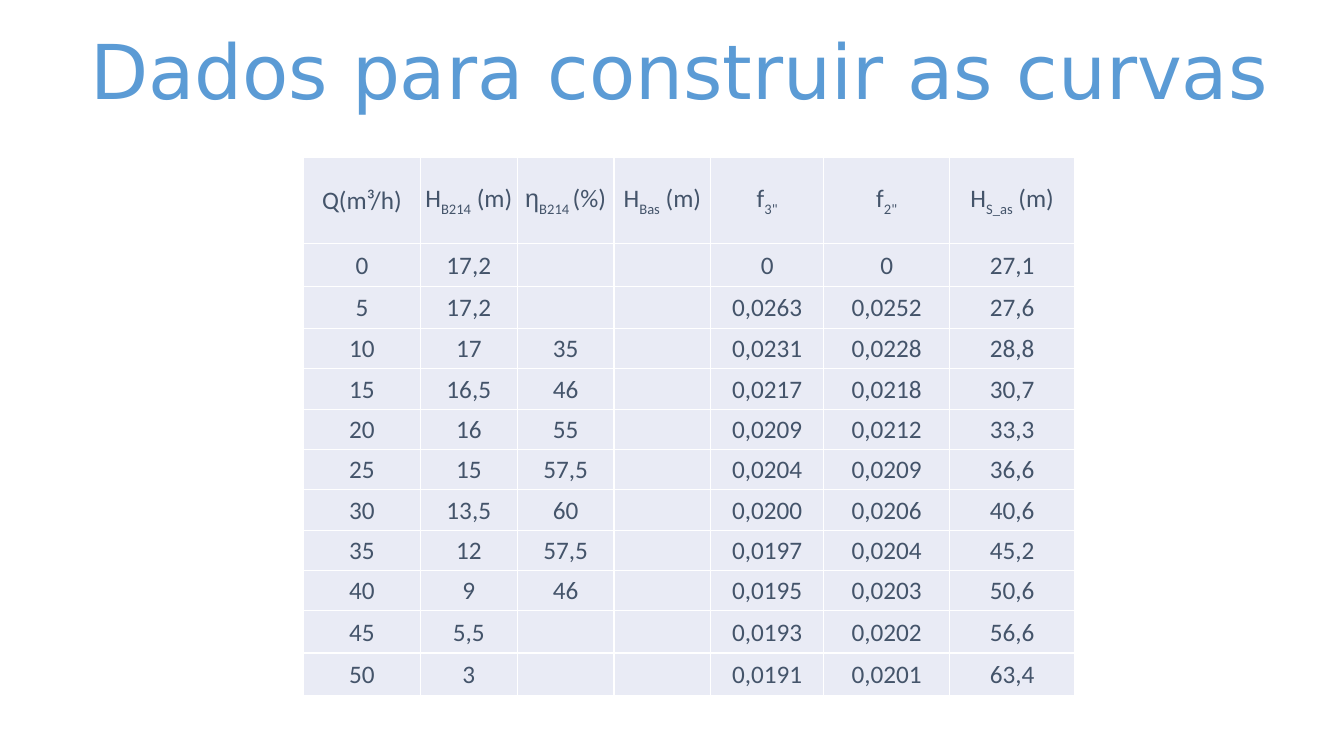
from pptx import Presentation
from pptx import util as u
from pptx.dml.color import RGBColor
from pptx.enum import text

COLORS = {"title": "5B9BD5", "ink": "44546A", "cell": "E9EBF5"}
COLS = [1.16, 0.96, 0.96, 0.96, 1.12, 1.25, 1.24]
ROWS = [0.86] + [0.42] * 2 + [0.4] * 7 + [0.42] * 2

# Header pieces alternate between normal text and subscript
HEADERS = [
    ["Q(m³/h)"],
    ["H", "B214", " (m)"],
    ["η", "B214 ", "(%)"],
    ["H", "Bas", " (m)"],
    ["f", '3"'],
    ["f", '2"'],
    ["H", "S_as", " (m)"],
]
DATA = [
    ["0", "17,2", "", "", "0", "0", "27,1"],
    ["5", "17,2", "", "", "0,0263", "0,0252", "27,6"],
    ["10", "17", "35", "", "0,0231", "0,0228", "28,8"],
    ["15", "16,5", "46", "", "0,0217", "0,0218", "30,7"],
    ["20", "16", "55", "", "0,0209", "0,0212", "33,3"],
    ["25", "15", "57,5", "", "0,0204", "0,0209", "36,6"],
    ["30", "13,5", "60", "", "0,0200", "0,0206", "40,6"],
    ["35", "12", "57,5", "", "0,0197", "0,0204", "45,2"],
    ["40", "9", "46", "", "0,0195", "0,0203", "50,6"],
    ["45", "5,5", "", "", "0,0193", "0,0202", "56,6"],
    ["50", "3", "", "", "0,0191", "0,0201", "63,4"],
]


def add_run(p, words, font, size, color):
    r = p.add_run()
    r.text = words
    r.font.name = font
    r.font.size = u.Pt(size)
    r.font.color.rgb = RGBColor.from_string(COLORS[color])
    return r


prs = Presentation()
prs.slide_width, prs.slide_height = u.Inches(13.33), u.Inches(7.5)
s = prs.slides.add_slide(prs.slide_layouts[5])

title = s.shapes.title
title.left, title.top = u.Inches(0.74), u.Inches(0.19)
title.width, title.height = u.Inches(12), u.Inches(1.01)
tf = title.text_frame
tf.word_wrap = False
tf.auto_size = text.MSO_AUTO_SIZE.NONE
tf.vertical_anchor = text.MSO_ANCHOR.TOP
p = tf.paragraphs[0]
p.alignment = text.PP_ALIGN.CENTER
add_run(p, "Dados para construir as curvas", "DejaVu Sans", 54, "title")

table = s.shapes.add_table(
    len(ROWS), len(COLS), u.Inches(3.01), u.Inches(1.56),
    u.Inches(sum(COLS)), u.Inches(sum(ROWS))).table
table.first_row = table.horz_banding = False
for column, width in zip(table.columns, COLS):
    column.width = u.Inches(width)
for row, height in zip(table.rows, ROWS):
    row.height = u.Inches(height)

contents = [HEADERS] + [[[value] if value else [] for value in line] for line in DATA]
for row, line in zip(table.rows, contents):
    for cell, pieces in zip(row.cells, line):
        cell.fill.solid()
        cell.fill.fore_color.rgb = RGBColor.from_string(COLORS["cell"])
        cell.vertical_anchor = text.MSO_ANCHOR.MIDDLE
        cell.margin_left = cell.margin_right = cell.margin_top = u.Inches(0.01)
        cell.margin_bottom = 0
        p = cell.text_frame.paragraphs[0]
        p.alignment = text.PP_ALIGN.CENTER
        for i, piece in enumerate(pieces):
            r = add_run(p, piece, "Arial" if piece == "η" else "Calibri", 18, "ink")
            if i % 2:
                r._r.get_or_add_rPr().set("baseline", "-25000")

prs.save("out.pptx")
